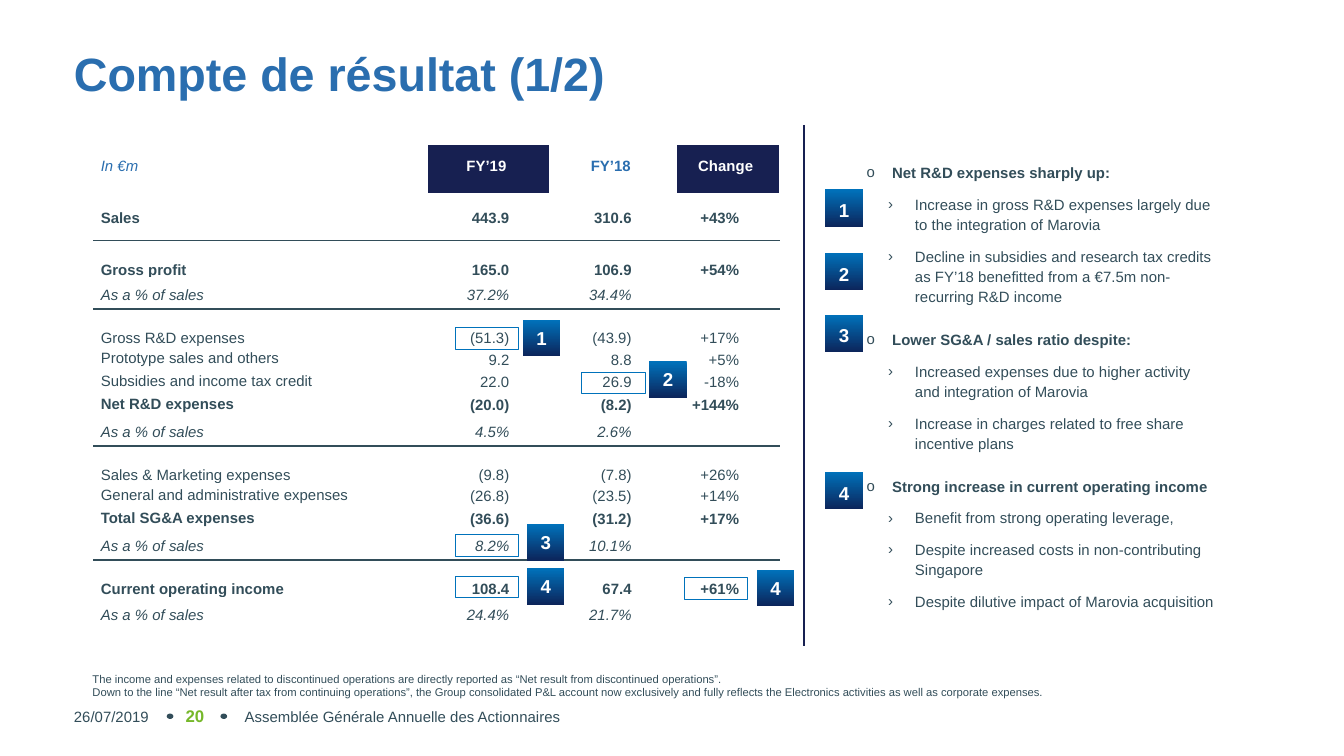
from lxml.etree import SubElement
from pptx import Presentation
from pptx.dml.color import RGBColor
from pptx.enum.shapes import MSO_CONNECTOR as Connector, MSO_SHAPE as Shape
from pptx.enum.text import MSO_ANCHOR as Anchor, PP_ALIGN as Align
from pptx.oxml.ns import qn
from pptx.util import Inches, Pt

COLORS = {"text": "324D59", "blue": "2A6EAF", "navy": "172051", "green": "76B82A",
          "white": "FFFFFF", "bright": "0072BB", "deep": "0C255B"}
WIDTH = 10
HEIGHT = WIDTH * 9 / 16

# Table: row kind, style (b bold, i italic), label and values
HEADER = ["In €m", "FY’19\u00a0", "FY’18", "Change"]
ROWS = [
    ("single", "b", "Sales", "443.9", "310.6", "+43%"),
    ("open", "b", "Gross profit", "165.0", "106.9", "+54%"),
    ("share", "i", "As a % of sales", "37.2%", "34.4%", ""),
    ("open", "", "Gross R&D expenses", "(51.3)", "(43.9)", "+17%"),
    ("line", "", "Prototype sales and others", "9.2", "8.8", "+5%"),
    ("line", "", "Subsidies and income tax credit", "22.0", "26.9", "-18%"),
    ("line", "b", "Net R&D expenses", "(20.0)", "(8.2)", "+144%"),
    ("share", "i", "As a % of sales", "4.5%", "2.6%", ""),
    ("open", "", "Sales & Marketing expenses", "(9.8)", "(7.8)", "+26%"),
    ("line", "", "General and administrative expenses", "(26.8)", "(23.5)", "+14%"),
    ("line", "b", "Total SG&A expenses", "(36.6)", "(31.2)", "+17%"),
    ("share", "i", "As a % of sales", "8.2%", "10.1%", ""),
    ("open", "b", "Current operating income", "108.4", "67.4", "+61%"),
    ("share", "i", "As a % of sales", "24.4%", "21.7%", ""),
]
# Row kind: height, label anchor, value anchor
KINDS = {"header": (0.4, Anchor.MIDDLE, Anchor.MIDDLE),
         "single": (0.35, Anchor.MIDDLE, Anchor.MIDDLE),
         "open": (0.28, Anchor.BOTTOM, Anchor.BOTTOM),
         "line": (0.17, Anchor.TOP, Anchor.MIDDLE),
         "share": (0.23, Anchor.MIDDLE, Anchor.MIDDLE)}
COLUMNS = [2.48, 0.91, 0.91, 0.8]
HEADER_LOOK = [("blue", None), ("white", "navy"), ("blue", "white"), ("white", "navy")]

# Highlighted values: frame left and top, badge left and top, number
HIGHLIGHTS = [(3.39, 2.44, 3.89, 2.38, "1"), (4.33, 2.77, 4.83, 2.69, "2"),
              (3.39, 3.98, 3.92, 3.90, "3"), (3.39, 4.29, 3.92, 4.23, "4"),
              (5.09, 4.30, 5.63, 4.24, "4")]
COMMENT_BADGES = [(1.41, "1"), (1.88, "2"), (2.34, "3"), (3.51, "4")]
COMMENTS = [
    ("Net R&D expenses sharply up:", [
        "Increase in gross R&D expenses largely due to the integration of Marovia",
        "Decline in subsidies and research tax credits as FY’18 benefitted from "
        "a €7.5m non-recurring R&D income"]),
    ("Lower SG&A / sales ratio despite:", [
        "Increased expenses due to higher activity and integration of Marovia",
        "Increase in charges related to free share incentive plans"]),
    ("Strong increase in current operating income", [
        "Benefit from strong operating leverage,",
        "Despite increased costs in non-contributing Singapore",
        "Despite dilutive impact of Marovia acquisition"]),
]
NOTES = [
    "The income and expenses related to discontinued operations are directly reported as "
    "“Net result from discontinued operations”.",
    "Down to the line “Net result after tax from continuing operations”, the Group consolidated "
    "P&L account now exclusively and fully reflects the Electronics activities as well as "
    "corporate expenses.",
]
# Plain texts: box, text, size, colour, bold, alignment
LABELS = [
    ((0.55, 0.33, 9.45, 0.42), "Compte de résultat (1/2)", 25, "blue", True, Align.LEFT),
    ((0.55, 5.18, 0.73, 0.3), "26/07/2019", 8, "text", False, Align.LEFT),
    ((1.82, 5.18, 6.59, 0.3), "Assemblée Générale Annuelle des Actionnaires", 8, "text",
     False, Align.LEFT),
    ((1.27, 5.18, 0.36, 0.3), "20", 9, "green", True, Align.CENTER),
]


def rgb(name):
    return RGBColor.from_string(COLORS[name])


def apply(target, values):
    for name, value in values.items():
        setattr(target, name, value)


def margins(left, top, right, bottom):
    sides = zip(("left", "top", "right", "bottom"), (left, top, right, bottom))
    return {f"margin_{side}": Inches(size) for side, size in sides}


def write(paragraph, text, size=8, color="text", bold=False, italic=False, **layout):
    apply(paragraph, layout)
    run = paragraph.add_run()
    run.text = text
    apply(run.font, {"name": "Arial", "size": Pt(size), "bold": bold, "italic": italic})
    run.font.color.rgb = rgb(color)


def add_text_frame(slide, box, **format_values):
    frame = slide.shapes.add_textbox(*map(Inches, box)).text_frame
    apply(frame, {"word_wrap": True, **format_values})
    return frame


def add_plain_shape(slide, kind, box):
    shape = slide.shapes.add_shape(kind, *map(Inches, box))
    shape.shadow.inherit = False
    return shape


def add_badge(slide, left, top, height, number, **layout):
    badge = add_plain_shape(slide, Shape.RECTANGLE, (left, top, 0.28, height))
    badge.line.fill.background()
    badge.fill.gradient()
    badge.fill.gradient_angle = 270
    for stop, position, color in zip(badge.fill.gradient_stops, (0, 1), ("bright", "deep")):
        stop.position = position
        stop.color.rgb = rgb(color)
    apply(badge.text_frame, {"vertical_anchor": Anchor.TOP, **margins(0, 0.05, 0, 0.05)})
    write(badge.text_frame.paragraphs[0], number, 10, "white", True,
          alignment=Align.CENTER, **layout)


def set_border(cell, side, color, points):
    line = SubElement(cell._tc.get_or_add_tcPr(), qn(f"a:ln{side}"), w=str(Pt(points)))
    fill = SubElement(line, qn("a:solidFill"))
    SubElement(fill, qn("a:srgbClr"), val=COLORS[color])


def set_bullet(paragraph, character, left, indent):
    properties = paragraph._p.get_or_add_pPr()
    properties.set("marL", str(Inches(left)))
    properties.set("indent", str(Inches(indent)))
    color = SubElement(properties, qn("a:buClr"))
    SubElement(color, qn("a:srgbClr"), val=COLORS["text"])
    SubElement(properties, qn("a:buFont"), typeface="Arial")
    SubElement(properties, qn("a:buChar"), char=character)


def add_income_table(slide):
    rows = [("header", "", *HEADER), *ROWS]
    heights = [KINDS[row[0]][0] for row in rows]
    table = slide.shapes.add_table(len(rows), len(COLUMNS), Inches(0.7), Inches(1.04),
                                   Inches(sum(COLUMNS)), Inches(sum(heights))).table
    apply(table, {"first_row": False, "horz_banding": False})
    for column, width in zip(table.columns, COLUMNS):
        column.width = Inches(width)
    for r, (kind, style, *texts) in enumerate(rows):
        table.rows[r].height = Inches(heights[r])
        is_header = kind == "header"
        next_kind = rows[r + 1][0] if r + 1 < len(rows) else None
        for c, text in enumerate(texts):
            cell, is_label = table.cell(r, c), c == 0
            right = 0.05 if is_label else 0.06 if is_header else 0.3
            apply(cell, {"vertical_anchor": KINDS[kind][1 if is_label else 2],
                         **margins(0.05 if is_label else 0.06, 0, right, 0)})
            # Borders: white gutter before the last column, rules between sections
            if c == 3:
                set_border(cell, "L", "white", 6)
            if c == 2:
                set_border(cell, "R", "white", 6)
            if is_header:
                set_border(cell, "T", "white", 6)
            elif kind == "open":
                set_border(cell, "T", "text", 1)
            if next_kind == "open":
                set_border(cell, "B", "text", 1)
            color, fill = HEADER_LOOK[c] if is_header else ("text", None)
            if fill:
                cell.fill.solid()
                cell.fill.fore_color.rgb = rgb(fill)
            else:
                cell.fill.background()
            paragraph = cell.text_frame.paragraphs[0]
            if not text:
                SubElement(paragraph._p, qn("a:endParaRPr"), sz="800")
                continue
            value_align = Align.CENTER if is_header else Align.RIGHT
            write(paragraph, text, 8, color,
                  bold=style == "b" or (is_header and not is_label),
                  italic=style == "i" or (is_header and is_label),
                  alignment=Align.LEFT if is_label else value_align,
                  line_spacing=1.0 if is_header else 1.2)


def add_comments(slide):
    frame = add_text_frame(slide, (6.31, 1.15, 2.86, 4))
    lines = []
    for heading, details in COMMENTS:
        lines.append((heading, True))
        lines += [(detail, False) for detail in details]
    for i, (text, is_heading) in enumerate(lines):
        paragraph = frame.add_paragraph() if i else frame.paragraphs[0]
        space = 0 if i == 0 else 12 if is_heading else 6
        apply(paragraph, {"line_spacing": 1.14, "space_before": Pt(space)})
        set_bullet(paragraph, *(("o", 0.23, -0.19) if is_heading else ("›", 0.4, -0.2)))
        write(paragraph, text, bold=is_heading)


def main():
    presentation = Presentation()
    apply(presentation, {"slide_width": Inches(WIDTH), "slide_height": Inches(HEIGHT)})
    slide = presentation.slides.add_slide(presentation.slide_layouts[6])

    # Title and footer
    for left in (1.24, 1.64):
        dot = add_plain_shape(slide, Shape.OVAL, (left, 5.31, 0.05, 0.04))
        dot.fill.solid()
        dot.fill.fore_color.rgb = rgb("text")
        dot.line.fill.background()
    for box, text, size, color, bold, alignment in LABELS:
        frame = add_text_frame(slide, box, vertical_anchor=Anchor.MIDDLE, **margins(0, 0, 0, 0))
        write(frame.paragraphs[0], text, size, color, bold, alignment=alignment)

    # Income statement with its highlights
    add_income_table(slide)
    for left, top, badge_left, badge_top, number in HIGHLIGHTS:
        add_badge(slide, badge_left, badge_top, 0.27, number)
        outline = add_plain_shape(slide, Shape.RECTANGLE, (left, top, 0.47, 0.16))
        outline.fill.background()
        outline.line.color.rgb = rgb("bright")
        outline.line.width = Pt(0.5)

    # Comments behind a vertical divider
    add_comments(slide)
    for top, number in COMMENT_BADGES:
        add_badge(slide, 6.14, top, 0.28, number, line_spacing=1.14)
    divider = slide.shapes.add_connector(Connector.STRAIGHT,
                                         *map(Inches, (5.98, 0.93, 5.98, 4.81)))
    divider.line.color.rgb = rgb("navy")
    divider.line.width = Pt(1)
    SubElement(divider._element.spPr, qn("a:effectLst"))

    # Notes
    frame = add_text_frame(slide, (0.59, 4.95, 8.47, 0.4))
    for i, note in enumerate(NOTES):
        write(frame.add_paragraph() if i else frame.paragraphs[0], note, 6)

    presentation.save("out.pptx")


if __name__ == "__main__":
    main()
